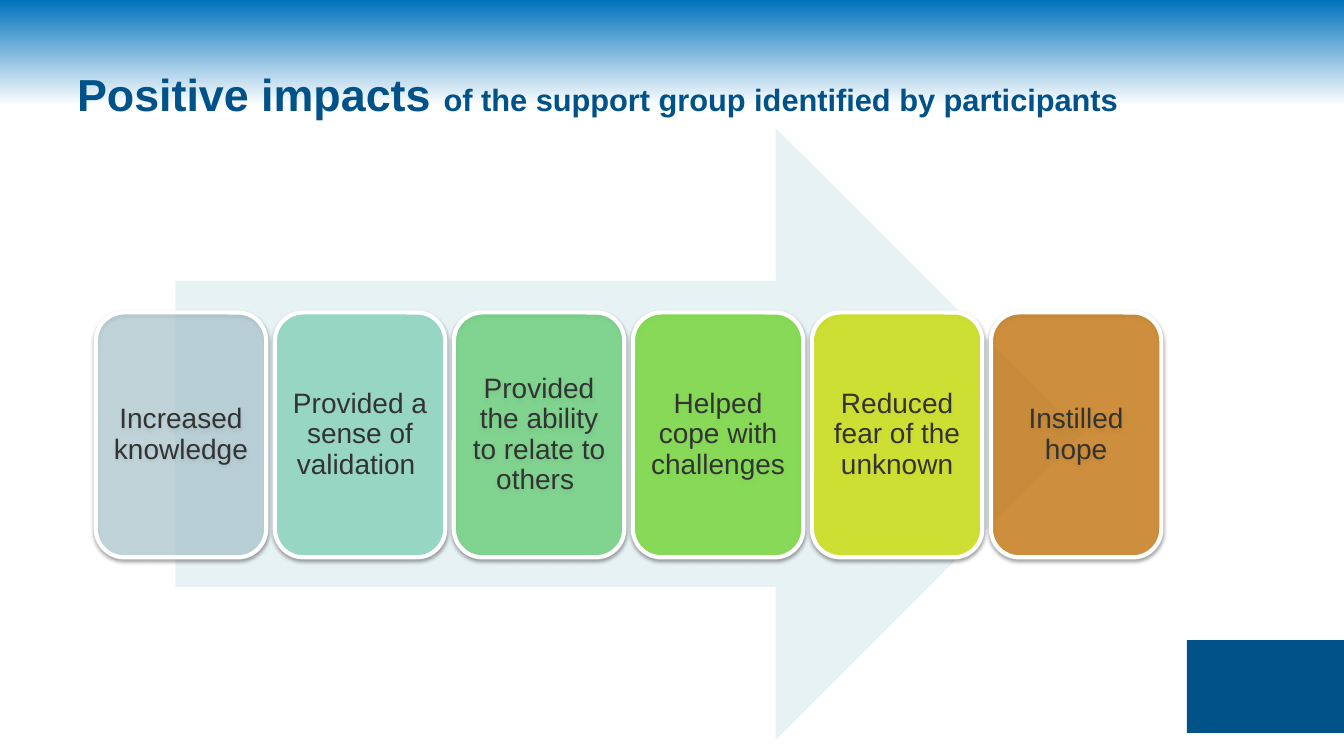
from dataclasses import dataclass

from lxml.etree import SubElement
from pptx import Presentation
from pptx.dml.color import RGBColor
from pptx.enum.shapes import MSO_SHAPE
from pptx.enum.text import MSO_ANCHOR, PP_ALIGN
from pptx.oxml.ns import qn
from pptx.util import Inches, Pt


@dataclass(frozen=True)
class Theme:
    font: str = "Arial"
    navy: str = "005288"
    sky: str = "0072BC"
    white: str = "FFFFFF"
    arrow: str = "E7F2F5"
    ink: str = "333333"
    shadow: str = "000000"
    title_size: int = 32
    subtitle_size: int = 22
    card_size: int = 20
    card_border: int = 3


def add_text(paragraph, text, *, font, size, color, bold=False):
    run = paragraph.add_run()
    run.text = text
    run.font.name = font
    run.font.size = Pt(size)
    run.font.bold = bold
    run.font.color.rgb = RGBColor.from_string(color)


class ImpactSlide:
    """Draws on one slide; every box is (left, top, width, height) in percent of the slide."""

    def __init__(self, deck, theme):
        self.deck = deck
        self.theme = theme
        self.slide = deck.slides.add_slide(deck.slide_layouts[6])

    def place(self, box):
        extents = (self.deck.slide_width, self.deck.slide_height) * 2
        return [round(extent * share / 100) for extent, share in zip(extents, box)]

    def background(self, fade_end):
        fill = self.slide.background.fill
        fill.gradient()
        fill.gradient_angle = 270
        stops = ((0, self.theme.sky), (fade_end, self.theme.white))
        for stop, (position, color) in zip(fill.gradient_stops, stops):
            stop.position = position
            stop.color.rgb = RGBColor.from_string(color)

    def block(self, preset, box, color):
        shape = self.slide.shapes.add_shape(preset, *self.place(box))
        shape.shadow.inherit = False
        shape.fill.solid()
        shape.fill.fore_color.rgb = RGBColor.from_string(color)
        shape.line.fill.background()
        return shape

    def title(self, box, lead, rest):
        theme = self.theme
        frame = self.slide.shapes.add_textbox(*self.place(box)).text_frame
        frame.word_wrap = True
        frame.vertical_anchor = MSO_ANCHOR.MIDDLE
        for text, size in ((lead, theme.title_size), (rest, theme.subtitle_size)):
            add_text(frame.paragraphs[0], text, font=theme.font, size=size,
                     color=theme.navy, bold=True)

    def card(self, box, label, color, opacity):
        theme = self.theme
        card = self.block(MSO_SHAPE.ROUNDED_RECTANGLE, box, color)
        card.line.color.rgb = RGBColor.from_string(theme.white)
        card.line.width = Pt(theme.card_border)
        self.set_opacity(card.fill._xPr.find(qn("a:solidFill"))[0], opacity)
        self.drop_shadow(card)

        frame = card.text_frame
        frame.word_wrap = True
        frame.vertical_anchor = MSO_ANCHOR.MIDDLE
        frame.margin_left = frame.margin_right = Inches(0.08)
        frame.margin_top = frame.margin_bottom = Inches(0.08)
        paragraph = frame.paragraphs[0]
        paragraph.alignment = PP_ALIGN.CENTER
        paragraph.line_spacing = 0.9
        add_text(paragraph, label, font=theme.font, size=theme.card_size, color=theme.ink)

    def drop_shadow(self, shape):
        effects = shape._element.spPr.find(qn("a:effectLst"))
        shadow = SubElement(effects, qn("a:outerShdw"), blurRad=str(Pt(3.1)),
                            dist=str(Pt(1.6)), dir="5400000", rotWithShape="0")
        color = SubElement(shadow, qn("a:srgbClr"), val=self.theme.shadow)
        self.set_opacity(color, 38)

    @staticmethod
    def set_opacity(color, percent):
        SubElement(color, qn("a:alpha"), val=str(percent * 1000))


IMPACTS = (
    ("Increased knowledge", "BBDDE6", 56),
    ("Provided a sense of validation ", "96E2CA", 82),
    ("Provided the ability to relate to others ", "6DE37E", 67),
    ("Helped cope with challenges ", "7FE83F", 77),
    ("Reduced fear of the unknown", "DBF00E", 76),
    ("Instilled hope", "D57800", 67),
)
FIRST_CARD, CARD_PITCH, CARD_WIDTH = 7.13, 13.32, 12.68


def main():
    deck = Presentation()
    deck.slide_width, deck.slide_height = Inches(13.33), Inches(7.5)
    theme = Theme()
    page = ImpactSlide(deck, theme)

    page.background(fade_end=0.14)
    page.block(MSO_SHAPE.RECTANGLE, (88.3, 84.67, 11.7, 12.27), theme.navy)
    page.title((5, 4, 90, 16.67), "Positive impacts ",
               "of the support group identified by participants")
    page.block(MSO_SHAPE.RIGHT_ARROW, (13.05, 16.93, 67.44, 80.93), theme.arrow)
    for column, (label, color, opacity) in enumerate(IMPACTS):
        left = FIRST_CARD + column * CARD_PITCH
        page.card((left, 41.33, CARD_WIDTH, 32.4), label, color, opacity)

    deck.save("out.pptx")


if __name__ == "__main__":
    main()
